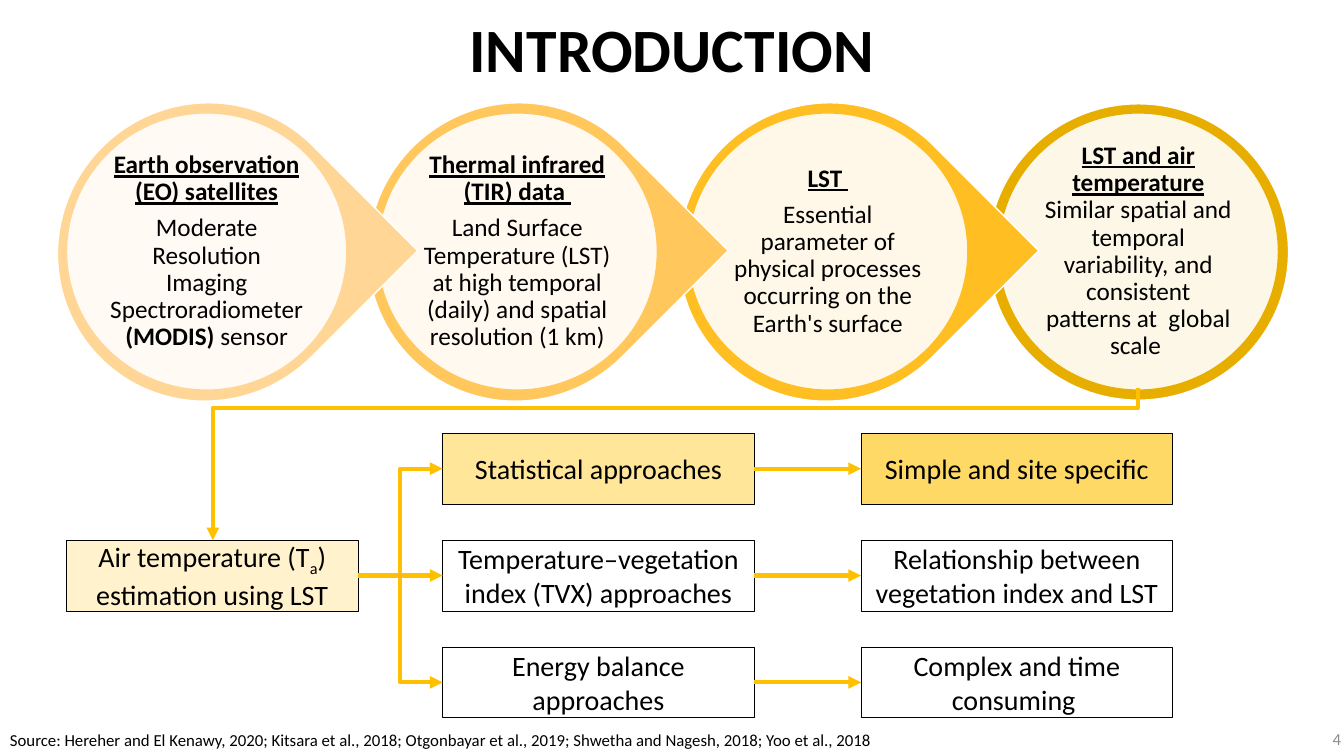
from dataclasses import dataclass

from lxml.etree import SubElement
from pptx import Presentation
from pptx.dml.color import RGBColor
from pptx.enum.shapes import MSO_CONNECTOR, MSO_SHAPE
from pptx.enum.text import MSO_ANCHOR, PP_ALIGN
from pptx.oxml.ns import qn
from pptx.util import Inches, Pt


@dataclass(frozen=True)
class Theme:
    """Colours, font and type sizes of the slide."""
    font: str = "Calibri"
    ink: str = "000000"
    paper: str = "FFFFFF"
    grey: str = "8C8C8C"
    arrow: str = "FFC000"
    pale: str = "FFF2CC"
    light: str = "FFE699"
    warm: str = "FFD966"
    rings: tuple = ("FFD695", "FFC75C", "FFBE22", "E7AE00")
    title: int = 44
    box: int = 20
    ring: int = 18
    small: int = 12


THEME = Theme()

STAGES = [
    [[("Earth observation (EO) satellites", "bu")],
     [("Moderate Resolution Imaging Spectroradiometer ", ""),
      ("(MODIS) ", "b"), ("sensor", "")]],
    [[("Thermal infrared (TIR) data ", "bu")],
     [("Land Surface Temperature (LST) at high temporal (daily) "
       "and spatial resolution (1 km)", "")]],
    [[("LST ", "bu")],
     [("Essential parameter of physical processes occurring "
       "on the Earth's surface", "")]],
    [[("LST and air temperature ", "bu"),
      ("Similar spatial and temporal variability, and consistent "
       "patterns at  global scale ", "")]],
]

ROWS = [
    ("Statistical approaches", THEME.light,
     "Simple and site specific", THEME.warm),
    ("Temperature–vegetation index (TVX) approaches", None,
     "Relationship between vegetation index and LST", None),
    ("Energy balance approaches", None,
     "Complex and time consuming ", None),
]


def rgb(code):
    """Turn a hex code into a colour."""
    return RGBColor.from_string(code)


def write(frame, paras, size, color=THEME.ink, align=PP_ALIGN.CENTER,
          lead=None, after=None):
    """Fill a frame with paragraphs of (text, style) runs."""
    frame.word_wrap = True
    frame.vertical_anchor = MSO_ANCHOR.MIDDLE
    for index, runs in enumerate(paras):
        para = frame.add_paragraph() if index else frame.paragraphs[0]
        para.alignment = align
        para.line_spacing = lead
        para.space_after = after
        for text, style in runs:
            run = para.add_run()
            run.text = text
            font = run.font
            font.name, font.size = THEME.font, Pt(size)
            font.color.rgb = rgb(color)
            font.bold = "b" in style
            font.underline = "u" in style
            if "s" in style:
                font._element.set("baseline", "-25000")


def shape(slide, kind, left, top, width, height, fill, line, weight):
    """Add a flat shape with its fill and line."""
    item = slide.shapes.add_shape(kind, Inches(left), Inches(top),
                                  Inches(width), Inches(height))
    item.shadow.inherit = False
    if fill:
        item.fill.solid()
        item.fill.fore_color.rgb = rgb(fill)
    else:
        item.fill.background()
    item.line.color.rgb = rgb(line)
    item.line.width = Pt(weight)
    return item


def label(slide, left, top, width, height, text, size, **look):
    """Add a text box with one line."""
    box = slide.shapes.add_textbox(Inches(left), Inches(top),
                                   Inches(width), Inches(height))
    write(box.text_frame, [text], size, **look)


def stage(slide, index):
    """Add one ring of the chain with its white disc and text."""
    color = THEME.rings[index]
    x, y = 2.05 + 3.08 * index, 2.5
    last = index == len(STAGES) - 1
    kind = MSO_SHAPE.OVAL if last else MSO_SHAPE.TEAR
    wide, high = (2.98, 2.94) if last else (2.94, 2.98)
    ring = shape(slide, kind, x - wide / 2, y - high / 2, wide, high,
                 color, THEME.paper, 1)
    ring.rotation = 0 if last else 45
    disc = shape(slide, MSO_SHAPE.OVAL, x - 1.39, 1.12, 2.78, 2.75,
                 THEME.paper, color, 1)
    tint = disc.fill._xPr.find(qn("a:solidFill"))[0]
    SubElement(tint, qn("a:alpha")).set("val", "90000")
    frame = disc.text_frame
    frame.margin_left = frame.margin_right = Inches(0.02)
    frame.margin_top = frame.margin_bottom = Inches(0.02)
    write(frame, STAGES[index], THEME.ring, lead=0.9, after=Pt(6.3))


def box(slide, left, top, width, runs, fill):
    """Add a thinly framed box of the lower diagram."""
    item = shape(slide, MSO_SHAPE.RECTANGLE, left, top, width, 0.7,
                 fill, THEME.ink, 0.25)
    write(item.text_frame, [runs], THEME.box)
    return item


def arrow(slide, kind, start=(0, 0), end=(0, 0)):
    """Add a connector with a triangle at its end."""
    ends = [Inches(value) for value in (*start, *end)]
    line = slide.shapes.add_connector(kind, *ends)
    line.line.color.rgb = rgb(THEME.arrow)
    line.line.width = Pt(3)
    props = line._element.spPr
    SubElement(props.find(qn("a:ln")), qn("a:tailEnd")).set("type", "triangle")
    SubElement(props, qn("a:effectLst"))
    return line


def link(slide, source, target, kind=MSO_CONNECTOR.STRAIGHT):
    """Join the right side of a box to the left side of another."""
    line = arrow(slide, kind)
    line.begin_connect(source, 3)
    line.end_connect(target, 1)


def drop(slide, start, end, bend):
    """Add an elbow that runs down, left and down again."""
    x, y = (start[0] + end[0]) / 2, (start[1] + end[1]) / 2
    half, reach = (end[1] - start[1]) / 2, (start[0] - end[0]) / 2
    line = arrow(slide, MSO_CONNECTOR.ELBOW,
                 (x - half, y - reach), (x + half, y + reach))
    props = line._element.spPr
    props.find(qn("a:xfrm")).set("rot", "5400000")
    shift = SubElement(props.find(qn("a:prstGeom")).find(qn("a:avLst")),
                       qn("a:gd"))
    shift.set("name", "adj1")
    shift.set("fmla", f"val {round(bend * 100000)}")


def main():
    """Build and save the slide."""
    deck = Presentation()
    deck.slide_width, deck.slide_height = Inches(13.33), Inches(7.5)
    slide = deck.slides.add_slide(deck.slide_layouts[6])

    for index in reversed(range(len(STAGES))):
        stage(slide, index)
    label(slide, 10.4, 7.13, 3, 0.4, [("4", "")], THEME.small,
          color=THEME.grey, align=PP_ALIGN.RIGHT)
    label(slide, 0.66, 0.02, 12.01, 1.01, [("INTRODUCTION", "b")],
          THEME.title, lead=0.9)

    root = box(slide, 0.66, 5.36, 2.89,
               [("Air temperature (T", ""), ("a", "s"),
                (") estimation using LST", "")], THEME.pale)
    for index, (method, tone, trait, shade) in enumerate(ROWS):
        top = 4.3 + 1.06 * index
        left = box(slide, 4.39, top, 3.09, [(method, "")], tone)
        right = box(slide, 8.54, top, 3.09, [(trait, "")], shade)
        level = left.top == root.top
        link(slide, root, left,
             MSO_CONNECTOR.STRAIGHT if level else MSO_CONNECTOR.ELBOW)
        link(slide, left, right)
    drop(slide, (11.29, 3.85), (2.11, 5.36), 0.13)

    label(slide, 0, 7.19, 9.6, 0.3,
          [("Source: Hereher and El Kenawy, 2020; Kitsara et al., 2018; "
            "Otgonbayar et al., 2019; Shwetha and Nagesh, 2018; "
            "Yoo et al., 2018", "")], THEME.small, align=PP_ALIGN.LEFT)
    deck.save("out.pptx")


if __name__ == "__main__":
    main()
